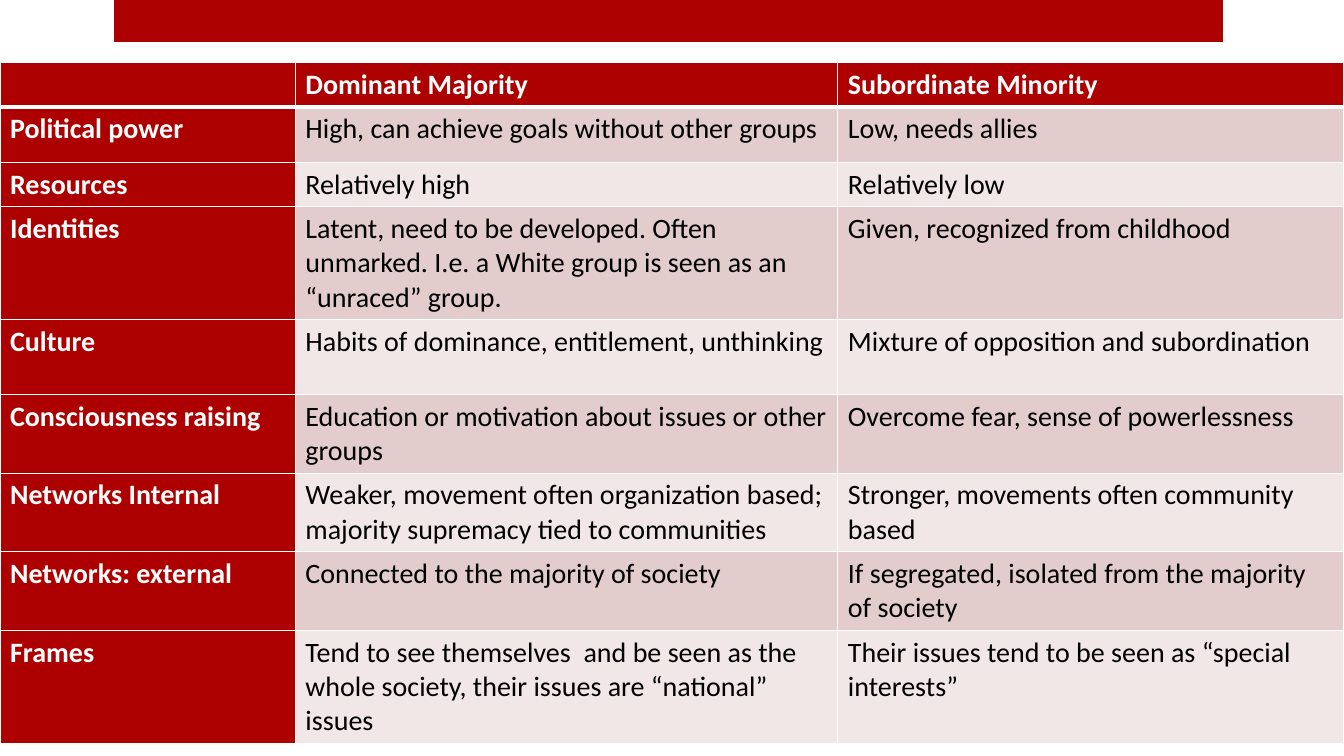
from pptx import Presentation
from pptx.dml.color import RGBColor
from pptx.enum.shapes import MSO_SHAPE
from pptx.oxml.ns import qn
from pptx.util import Pt
from lxml.etree import SubElement

HUES = {"red": "AD0101", "rose": "E3CCCC", "pale": "F1E7E7",
        "white": "FFFFFF", "black": "000000"}

ROWS = [
    (31, "", "Dominant Majority", "Subordinate Minority"),
    (39.6, "Political power", "High, can achieve goals without other groups",
     "Low, needs allies"),
    (31, "Resources", "Relatively high", "Relatively low"),
    (77, "Identities",
     "Latent, need to be developed. Often unmarked. "
     "I.e. a White group is seen as an “unraced” group.",
     "Given, recognized from childhood"),
    (53.3, "Culture", "Habits of dominance, entitlement, unthinking",
     "Mixture of opposition and subordination"),
    (53.3, "Consciousness raising",
     "Education or motivation about issues or other groups",
     "Overcome fear, sense of powerlessness"),
    (53.3, "Networks Internal",
     "Weaker, movement often organization based; "
     "majority supremacy tied to communities",
     "Stronger, movements often community based"),
    (53.3, "Networks: external", "Connected to the majority of society",
     "If segregated, isolated from the majority of society"),
    (77, "Frames",
     "Tend to see themselves  and be seen as the whole society, "
     "their issues are “national” issues",
     "Their issues tend to be seen as “special interests”"),
]
COLS = [211, 387.5, 361.5]


class Deck:
    def __init__(self, wide, high, font, size):
        self.prs = Presentation()
        self.prs.slide_width, self.prs.slide_height = Pt(wide), Pt(high)
        self.slide = self.prs.slides.add_slide(self.prs.slide_layouts[6])
        self.font, self.size = font, size

    def hue(self, name):
        return RGBColor.from_string(HUES[name])

    def bar(self, left, top, wide, high, hue):
        box = self.slide.shapes.add_shape(
            MSO_SHAPE.RECTANGLE, Pt(left), Pt(top), Pt(wide), Pt(high))
        box.shadow.inherit = False
        box.fill.solid()
        box.fill.fore_color.rgb = self.hue(hue)
        box.line.fill.background()

    def edge(self, cell, side, width):
        props = cell._tc.get_or_add_tcPr()
        line = SubElement(props, qn("a:ln" + side), w=str(Pt(width)))
        fill = SubElement(line, qn("a:solidFill"))
        SubElement(fill, qn("a:srgbClr"), val=HUES["white"])

    def cell(self, cell, text, fill, ink, bold, edges):
        for side, width in edges.items():
            self.edge(cell, side, width)
        cell.fill.solid()
        cell.fill.fore_color.rgb = self.hue(fill)
        cell.text_frame.text = text
        for run in cell.text_frame.paragraphs[0].runs:
            run.font.name, run.font.size = self.font, Pt(self.size)
            run.font.bold = bold
            run.font.color.rgb = self.hue(ink)

    def table(self, left, top, cols, rows):
        high = sum(row[0] for row in rows)
        grid = self.slide.shapes.add_table(
            len(rows), len(cols), Pt(left), Pt(top), Pt(sum(cols)), Pt(high)).table
        grid.horz_banding = False
        for col, wide in zip(grid.columns, cols):
            col.width = Pt(wide)
        for r, (tall, *texts) in enumerate(rows):
            grid.rows[r].height = Pt(tall)
            edges = {"L": 1, "R": 1, "T": 3 if r == 1 else 1, "B": 3 if r == 0 else 1}
            for c, text in enumerate(texts):
                head = r == 0 or c == 0
                fill = "red" if head else "rose" if r % 2 else "pale"
                ink = "white" if head else "black"
                self.cell(grid.cell(r, c), text, fill, ink, head, edges)

    def save(self):
        self.prs.save("out.pptx")


def main():
    deck = Deck(960, 540, "Calibri", 20)
    deck.bar(81.5, 0, 792, 30, "red")
    deck.table(0, 44.7, COLS, ROWS)
    deck.save()


if __name__ == "__main__":
    main()
